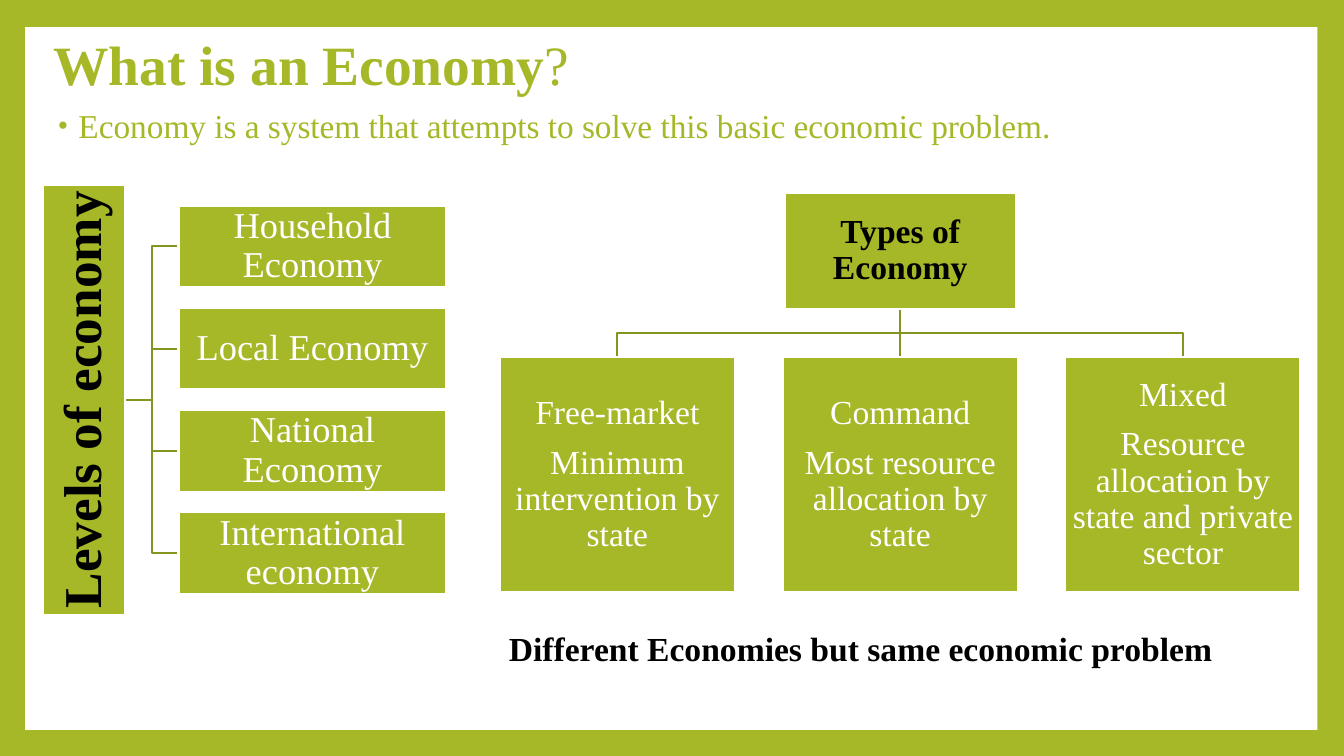
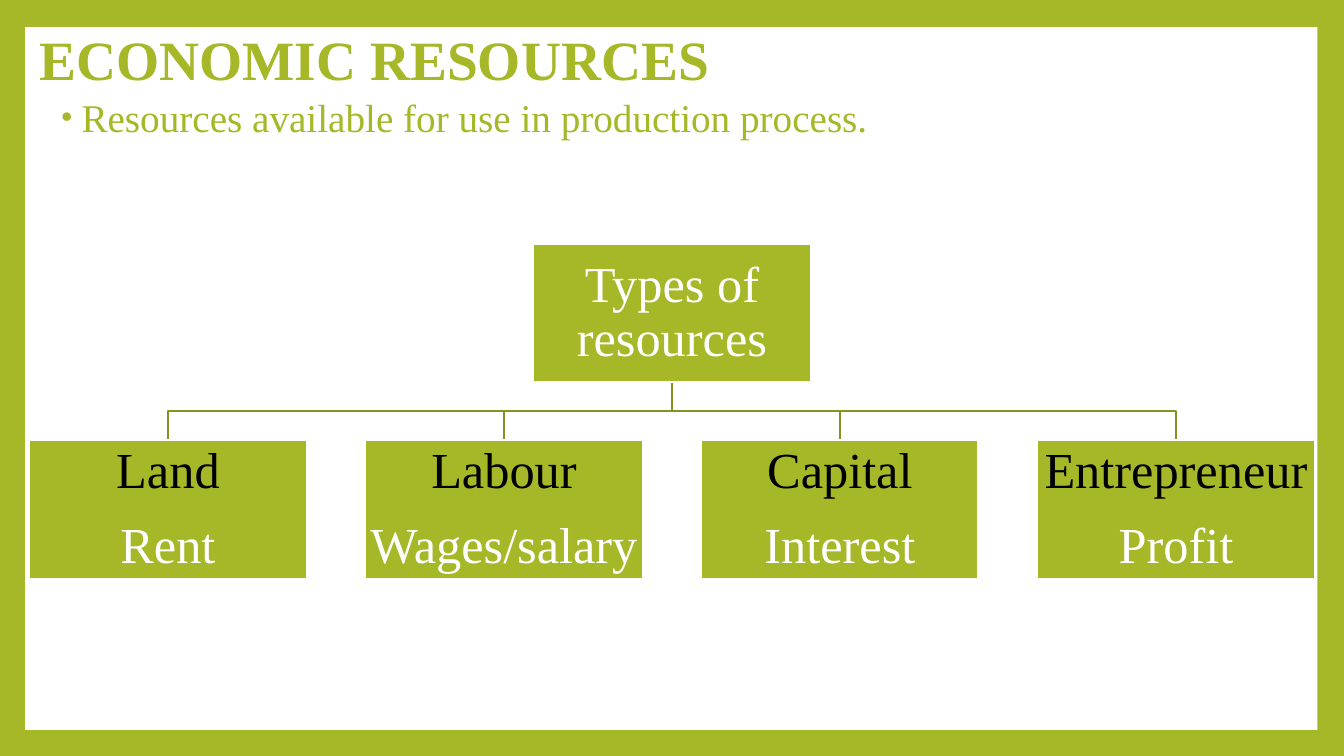
import pptx
import pptx.dml.color
import pptx.enum.shapes
import pptx.enum.text
import pptx.oxml
import pptx.oxml.ns
import pptx.util

Pt = pptx.util.Pt
FONT = "Times New Roman"
GREEN, DARK_GREEN, WHITE, BLACK = "A6B727", "85931F", "FFFFFF", "000000"


def rgb(color):
    return pptx.dml.color.RGBColor.from_string(color)


def write(p, text, size=24, color=GREEN, bold=False, center=False, spacing=1.0, after=0):
    r = p.add_run()
    r.text = text
    r.font.name = FONT
    r.font.size = Pt(size)
    r.font.bold = bold
    r.font.color.rgb = rgb(color)
    p.line_spacing = spacing
    p.space_after = Pt(after)
    if center:
        p.alignment = pptx.enum.text.PP_ALIGN.CENTER


def add_rect(s, x, y, w, h, fill, line=None):
    sp = s.shapes.add_shape(
        pptx.enum.shapes.MSO_SHAPE.RECTANGLE, Pt(x), Pt(y), Pt(w), Pt(h))
    sp.shadow.inherit = False
    sp.fill.solid()
    sp.fill.fore_color.rgb = rgb(fill)
    if line:
        sp.line.color.rgb = rgb(line)
        sp.line.width = Pt(1.5)
    else:
        sp.line.fill.background()
    return sp


def add_textbox(s, x, y, w, h):
    tf = s.shapes.add_textbox(Pt(x), Pt(y), Pt(w), Pt(h)).text_frame
    tf.word_wrap = True
    return tf


def add_title(s, x, y, w, h, text, tail=""):
    tf = add_textbox(s, x, y, w, h)
    tf.vertical_anchor = pptx.enum.text.MSO_ANCHOR.MIDDLE
    p = tf.paragraphs[0]
    write(p, text, size=39.6, bold=True, spacing=0.9)
    if tail:
        write(p, tail, size=39.6, spacing=0.9)


def add_bullet(s, x, y, w, h, text, size):
    p = add_textbox(s, x, y, w, h).paragraphs[0]
    write(p, text, size=size, spacing=0.8)
    p.space_before = Pt(14)
    pPr = p._p.get_or_add_pPr()
    pPr.set("marL", str(Pt(18)))
    pPr.set("indent", str(Pt(-14.4)))
    ns = pptx.oxml.ns.nsdecls("a")
    for xml in (
        f'<a:buClr {ns}><a:srgbClr val="{GREEN}"/></a:buClr>',
        f'<a:buSzPct {ns} val="80000"/>',
        f'<a:buFont {ns} typeface="Arial"/>',
        f'<a:buChar {ns} char="•"/>',
    ):
        pPr.append(pptx.oxml.parse_xml(xml))


def add_node(s, rect, lines, size, colors, bold=False, upright=False):
    x, y, w, h = rect
    if upright:
        x, y, w, h = x + (w - h) / 2, y + (h - w) / 2, h, w
    sp = add_rect(s, x, y, w, h, GREEN, WHITE)
    sp.rotation = 270 if upright else 0
    tf = sp.text_frame
    tf.word_wrap = True
    tf.vertical_anchor = pptx.enum.text.MSO_ANCHOR.MIDDLE
    tf.margin_left = tf.margin_right = tf.margin_top = tf.margin_bottom = Pt(size * 0.05)
    for i, text in enumerate(lines):
        p = tf.paragraphs[0] if i == 0 else tf.add_paragraph()
        after = size * 0.4 if i < len(lines) - 1 else 0
        write(p, text, size=size, color=colors[i], bold=bold, center=True,
              spacing=0.9, after=after)
    return sp


def style_line(line):
    line.color.rgb = rgb(DARK_GREEN)
    line.width = Pt(1.5)


def add_elbow(s, points):
    points = [(Pt(x), Pt(y)) for x, y in points]
    fb = s.shapes.build_freeform(*points[0], scale=1.0)
    fb.add_line_segments(points[1:], close=False)
    sp = fb.convert_to_shape()
    sp.shadow.inherit = False
    sp.fill.background()
    style_line(sp.line)


def add_straight(s, x1, y1, x2, y2):
    cn = s.shapes.add_connector(
        pptx.enum.shapes.MSO_CONNECTOR.STRAIGHT, Pt(x1), Pt(y1), Pt(x2), Pt(y2))
    style_line(cn.line)
    cn._element.spPr.append(pptx.oxml.parse_xml(
        f'<a:effectLst {pptx.oxml.ns.nsdecls("a")}/>'))
    return cn


def add_down_tree(s, root, first, pitch, root_text, children, size,
                  root_color, child_colors, bold=False):
    x, y, w, h = root
    cx, bottom = x + w / 2, y + h
    left, top, cw, ch = first
    rects = [(left + i * pitch, top, cw, ch) for i in range(len(children))]
    mid = (bottom + top) / 2
    straight = {}
    for i, rect in enumerate(rects):
        end = rect[0] + cw / 2
        if end == cx:
            straight[i] = add_straight(s, cx, bottom, cx, top)
        else:
            add_elbow(s, [(cx, bottom), (cx, mid), (end, mid), (end, top)])
    root_node = add_node(s, root, [root_text], size, [root_color], bold)
    nodes = [add_node(s, rect, lines, size, child_colors)
             for rect, lines in zip(rects, children)]
    for i, cn in straight.items():
        cn.begin_connect(root_node, 2)
        cn.end_connect(nodes[i], 0)


def add_side_tree(s, root, first, pitch, root_text, children):
    x, y, w, h = root
    right, cy = x + w, y + h / 2
    left, top, cw, ch = first
    mid = (right + left) / 2
    rects = [(left, top + i * pitch, cw, ch) for i in range(len(children))]
    for rect in rects:
        end = rect[1] + ch / 2
        add_elbow(s, [(right, cy), (mid, cy), (mid, end), (left, end)])
    add_node(s, root, [root_text], 38, [BLACK], bold=True, upright=True)
    for rect, text in zip(rects, children):
        add_node(s, rect, [text], 26, [WHITE])


def add_slide(prs):
    s = prs.slides.add_slide(prs.slide_layouts[6])
    s.background.fill.solid()
    s.background.fill.fore_color.rgb = rgb(GREEN)
    add_rect(s, 18, 19.4, 923, 502, WHITE)
    return s


def build_economy(prs):
    s = add_slide(prs)
    add_title(s, 31, 27.4, 789, 41.8, "What is an Economy", "?")
    add_bullet(s, 31, 77, 789, 32.4,
               "Economy is a system that attempts to solve this basic economic problem.", 23.8)
    add_side_tree(s, (31, 131.8, 58.4, 307.4), (127.5, 146.8, 191.5, 58.4), 73,
                  "Levels of economy",
                  ["Household Economy", "Local Economy", "National Economy",
                   "International economy"])
    add_down_tree(s, (560.5, 137.5, 165, 83), (357, 255, 168, 168), 202,
                  "Types of Economy",
                  [("Free-market", "Minimum intervention by state"),
                   ("Command", "Most resource allocation by state"),
                   ("Mixed", "Resource allocation by state and private sector")],
                  24, BLACK, [WHITE, WHITE], bold=True)
    tf = add_textbox(s, 356.4, 445, 572.4, 36)
    write(tf.paragraphs[0], "Different Economies but same economic problem",
          color=BLACK, bold=True)


def build_resources(prs):
    s = add_slide(prs)
    add_title(s, 21, 19.4, 828, 50.4, "ECONOMIC RESOURCES")
    add_bullet(s, 33.2, 69.8, 828, 34.6,
               "Resources available for use in production process.", 28)
    add_down_tree(s, (381, 174, 198, 99), (21, 314.6, 198, 99), 240,
                  "Types of resources",
                  [("Land", "Rent"), ("Labour", "Wages/salary"),
                   ("Capital", "Interest"), ("Entrepreneur", "Profit")],
                  36, WHITE, [BLACK, WHITE])


def main():
    prs = pptx.Presentation()
    prs.slide_width, prs.slide_height = Pt(960), Pt(540)
    build_economy(prs)
    build_resources(prs)
    prs.save("out.pptx")


if __name__ == "__main__":
    main()
